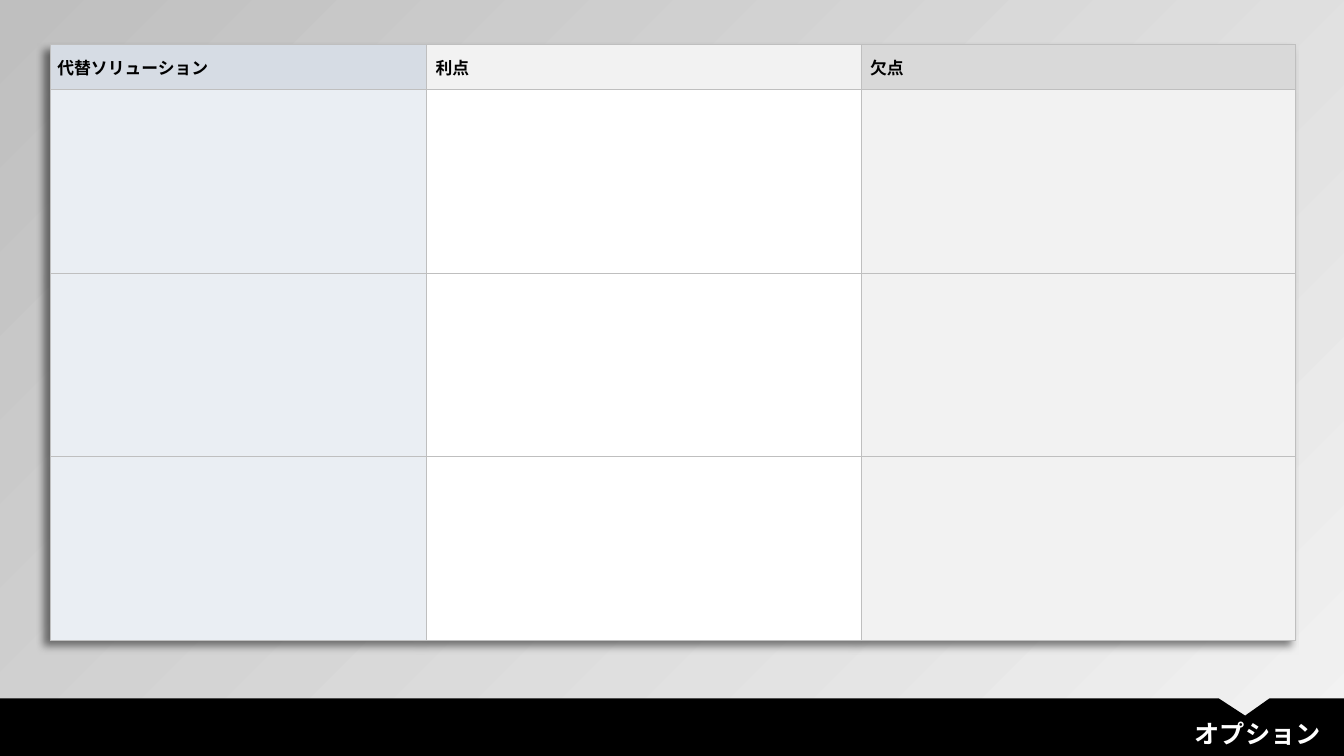
from dataclasses import dataclass

from lxml.etree import SubElement
from pptx import Presentation
from pptx.dml.color import RGBColor
from pptx.enum.text import MSO_ANCHOR as Anchor, MSO_AUTO_SIZE as AutoSize, PP_ALIGN as Align
from pptx.oxml import parse_xml
from pptx.oxml.ns import nsdecls, qn
from pptx.slide import Slide
from pptx.table import _Cell as Cell
from pptx.text.text import TextFrame
from pptx.util import Inches, Pt


@dataclass(frozen=True)
class Theme:
    font: str = "TeX Gyre Adventor"
    title_size: int = 18
    header_size: int = 12
    black: str = "000000"
    white: str = "FFFFFF"
    border: str = "BFBFBF"
    border_width: float = 0.5
    gradient: tuple[str, str] = ("F2F2F2", "BFBFBF")


@dataclass(frozen=True)
class Column:
    heading: str
    width: float
    header_fill: str
    body_fill: str
    margins: tuple[float, float, float, float]  # left, top, right, bottom


THEME = Theme()
COLUMNS = [
    Column("代替ソリューション", 3.73, "D6DCE4", "EAEEF3", (0.07, 0, 0.07, 0)),
    Column("利点", 4.31, "F2F2F2", "FFFFFF", (0.09, 0.01, 0.01, 0)),
    Column("欠点", 4.31, "D9D9D9", "F2F2F2", (0.09, 0.01, 0.01, 0)),
]
HEADER_HEIGHT = 0.45
OPTION_HEIGHT = 1.82
OPTION_COUNT = 3
BAND_OUTLINE = [(0, 6.93), (12.09, 6.93), (12.35, 7.1), (12.59, 6.93),
                (13.33, 6.93), (13.33, 7.5), (0, 7.5)]


def write_text(frame: TextFrame, text: str, *, size: int, color: str,
               bold: bool = True, align: Align = Align.LEFT) -> None:
    para = frame.paragraphs[0]
    para.alignment = align
    span = para.add_run()
    span.text = text
    span.font.name = THEME.font
    span.font.size = Pt(size)
    span.font.bold = bold
    span.font.color.rgb = RGBColor.from_string(color)


def format_cell(cell: Cell, fill: str) -> None:
    properties = cell._tc.get_or_add_tcPr()
    for side in ("lnL", "lnR", "lnT", "lnB"):
        line = SubElement(properties, qn(f"a:{side}"), w=str(Pt(THEME.border_width)))
        solid = SubElement(line, qn("a:solidFill"))
        SubElement(solid, qn("a:srgbClr"), val=THEME.border)
    cell.fill.solid()
    cell.fill.fore_color.rgb = RGBColor.from_string(fill)


def paint_background(page: Slide) -> None:
    fill = page.background.fill
    fill.gradient()
    fill.gradient_angle = 135
    for stop, color in zip(fill.gradient_stops, THEME.gradient):
        stop.color.rgb = RGBColor.from_string(color)


def add_options_table(page: Slide) -> None:
    heights = [HEADER_HEIGHT] + [OPTION_HEIGHT] * OPTION_COUNT
    width = sum(column.width for column in COLUMNS)
    table = page.shapes.add_table(
        len(heights), len(COLUMNS), Inches(0.5), Inches(0.44),
        Inches(width), Inches(sum(heights))).table
    table.horz_banding = False

    # Soft shadow towards the lower left
    table._tbl.tblPr.insert(0, parse_xml(
        f'<a:effectLst {nsdecls("a")}>'
        '<a:outerShdw blurRad="76200" dist="76200" dir="8100000" algn="tr" rotWithShape="0">'
        '<a:srgbClr val="000000"><a:alpha val="50000"/></a:srgbClr>'
        '</a:outerShdw></a:effectLst>'))

    for row, height in zip(table.rows, heights):
        row.height = Inches(height)
    for index, column in enumerate(COLUMNS):
        table.columns[index].width = Inches(column.width)
        header = table.cell(0, index)
        format_cell(header, column.header_fill)
        header.vertical_anchor = Anchor.MIDDLE
        (header.margin_left, header.margin_top,
         header.margin_right, header.margin_bottom) = map(Inches, column.margins)
        write_text(header.text_frame, column.heading,
                   size=THEME.header_size, color=THEME.black)
        for option in range(1, OPTION_COUNT + 1):
            format_cell(table.cell(option, index), column.body_fill)


def add_footer_band(page: Slide) -> None:
    start, *corners = [(Inches(x), Inches(y)) for x, y in BAND_OUTLINE]
    builder = page.shapes.build_freeform(*start)
    builder.add_line_segments(corners, close=True)
    band = builder.convert_to_shape()
    band.shadow.inherit = False
    band.fill.solid()
    band.fill.fore_color.rgb = RGBColor.from_string(THEME.black)
    band.line.fill.background()


def place_title(page: Slide, text: str) -> None:
    title = page.shapes.title
    title.left, title.top = Inches(4.14), Inches(7.08)
    title.width, title.height = Inches(9.06), Inches(0.4)
    frame = title.text_frame
    frame.word_wrap = True
    frame.auto_size = AutoSize.NONE
    frame.vertical_anchor = Anchor.TOP
    write_text(frame, text, size=THEME.title_size, color=THEME.white, align=Align.RIGHT)
    # Bring the title in front of the band
    title.element.getparent().append(title.element)


def main() -> None:
    deck = Presentation()
    deck.slide_width, deck.slide_height = Inches(13.33), Inches(7.5)
    page = deck.slides.add_slide(deck.slide_layouts[5])
    paint_background(page)
    add_options_table(page)
    add_footer_band(page)
    place_title(page, "オプション")
    deck.save("out.pptx")


if __name__ == "__main__":
    main()
